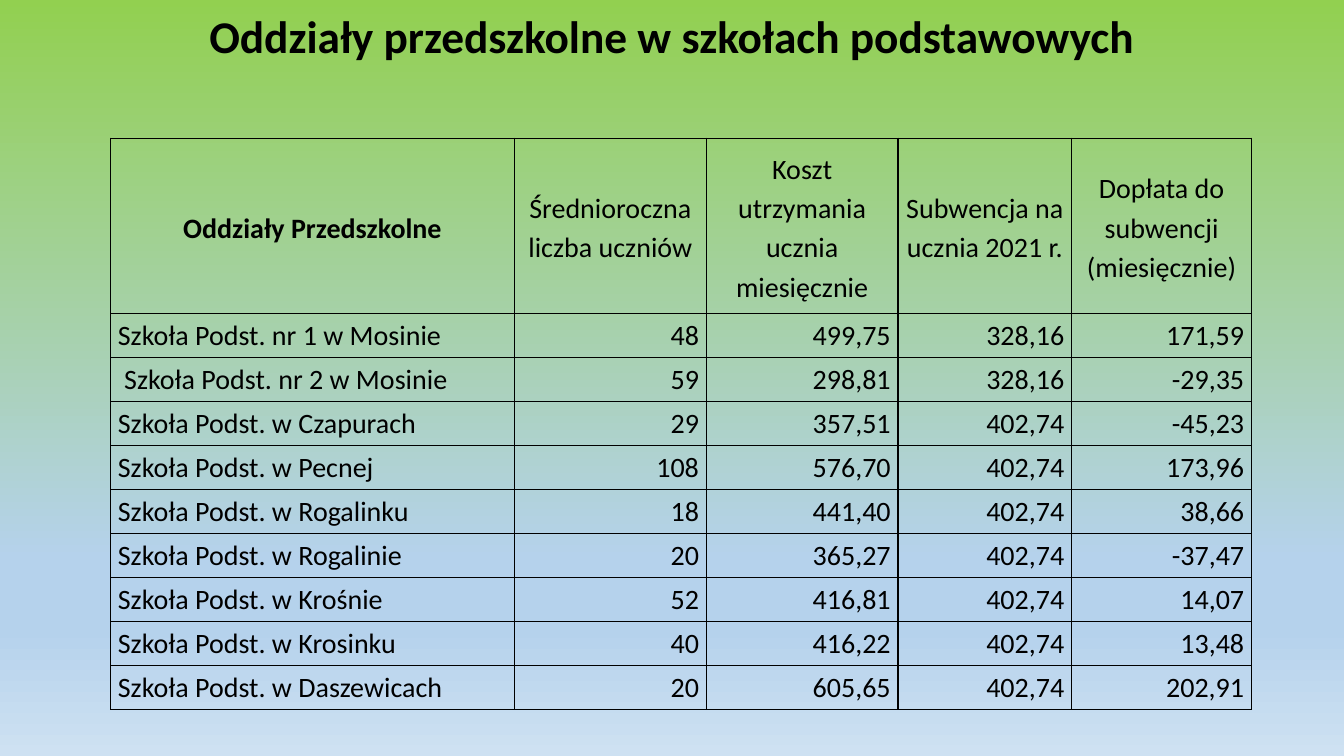
from copy import deepcopy

from lxml.etree import SubElement as Sub
from pptx import Presentation
from pptx.dml.color import RGBColor
from pptx.enum.text import MSO_ANCHOR as Anchor, PP_ALIGN as Align
from pptx.oxml.ns import qn
from pptx.util import Pt

BLACK = RGBColor(0, 0, 0)
GREEN = RGBColor(0x92, 0xD0, 0x50)
BLUE = RGBColor(0xB5, 0xD2, 0xEC)
PALE = RGBColor(0xCE, 0xE1, 0xF2)
STOPS = [(0, GREEN), (0.74, BLUE), (0.83, BLUE), (1, PALE)]
FONT = "Calibri"

TITLE = "Oddziały przedszkolne w szkołach podstawowych\v"
HEADS = [
    "Oddziały Przedszkolne",
    "Średnioroczna liczba uczniów",
    "Koszt utrzymania ucznia miesięcznie",
    "Subwencja na ucznia 2021 r.",
    "Dopłata do subwencji (miesięcznie)",
]
SCHOOLS = [
    ("Szkoła Podst. nr 1 w Mosinie", "48", "499,75", "328,16", "171,59"),
    (" Szkoła Podst. nr 2 w Mosinie", "59", "298,81", "328,16", "-29,35"),
    ("Szkoła Podst. w Czapurach", "29", "357,51", "402,74", "-45,23"),
    ("Szkoła Podst. w Pecnej", "108", "576,70", "402,74", "173,96"),
    ("Szkoła Podst. w Rogalinku", "18", "441,40", "402,74", "38,66"),
    ("Szkoła Podst. w Rogalinie", "20", "365,27", "402,74", "-37,47"),
    ("Szkoła Podst. w Krośnie", "52", "416,81", "402,74", "14,07"),
    ("Szkoła Podst. w Krosinku", "40", "416,22", "402,74", "13,48"),
    ("Szkoła Podst. w Daszewicach", "20", "605,65", "402,74", "202,91"),
]
WIDTHS = [288.5, 137, 137, 124, 128.5]
HEAD_H, ROW_H = 125.3, 31.43


def write(frame, text, size=20, bold=False, align=Align.LEFT, line=1.15, after=10):
    """Put one formatted paragraph into a text frame."""
    frame.text = text
    para = frame.paragraphs[0]
    para.alignment, para.line_spacing, para.space_after = align, line, Pt(after)
    for run in para.runs:
        font = run.font
        font.name, font.size, font.bold = FONT, Pt(size), bold
        font.color.rgb = BLACK


def paint(slide):
    """Fill the background with a vertical gradient."""
    fill = slide.background.fill
    fill.gradient()
    fill.gradient_angle = 270
    group = next(slide.element.iter(qn("a:gsLst")))
    while len(group) < len(STOPS):
        group.append(deepcopy(group[0]))
    for stop, (place, color) in zip(fill.gradient_stops, STOPS):
        stop.position = place
        stop.color.rgb = color


def edge(cell):
    """Draw a thin black border round a cell."""
    props = cell._tc.get_or_add_tcPr()
    for side in ("a:lnL", "a:lnR", "a:lnT", "a:lnB"):
        line = Sub(props, qn(side), w=str(Pt(1)))
        solid = Sub(line, qn("a:solidFill"))
        Sub(solid, qn("a:srgbClr"), val=str(BLACK))


def add_title(slide):
    """Place and write the slide title."""
    title = slide.shapes.title
    title.left, title.top, title.width, title.height = Pt(66), Pt(28.8), Pt(828), Pt(51)
    frame = title.text_frame
    frame.word_wrap = True
    frame.vertical_anchor = Anchor.MIDDLE
    write(frame, TITLE, size=32.4, bold=True, align=Align.CENTER, line=0.9, after=0)


def add_grid(slide):
    """Add the table of schools."""
    data = [HEADS, *SCHOOLS]
    high = HEAD_H + ROW_H * len(SCHOOLS)
    grid = slide.shapes.add_table(
        len(data), len(HEADS), Pt(79), Pt(98.8), Pt(sum(WIDTHS)), Pt(high)
    ).table
    grid.first_row = grid.horz_banding = False
    for col, width in zip(grid.columns, WIDTHS):
        col.width = Pt(width)
    for r, values in enumerate(data):
        head = r == 0
        grid.rows[r].height = Pt(HEAD_H if head else ROW_H)
        for c, text in enumerate(values):
            cell = grid.cell(r, c)
            cell.margin_left = cell.margin_right = Pt(5.2)
            cell.margin_top = cell.margin_bottom = Pt(0)
            cell.vertical_anchor = Anchor.MIDDLE if head else Anchor.TOP
            edge(cell)
            cell.fill.background()
            align = Align.CENTER if head else Align.RIGHT if c else Align.LEFT
            write(cell.text_frame, text, bold=head and c == 0, align=align)


def main():
    """Build and save the slide."""
    deck = Presentation()
    deck.slide_width, deck.slide_height = Pt(960), Pt(540)
    slide = deck.slides.add_slide(deck.slide_layouts[5])
    paint(slide)
    add_title(slide)
    add_grid(slide)
    deck.save("out.pptx")


if __name__ == "__main__":
    main()
